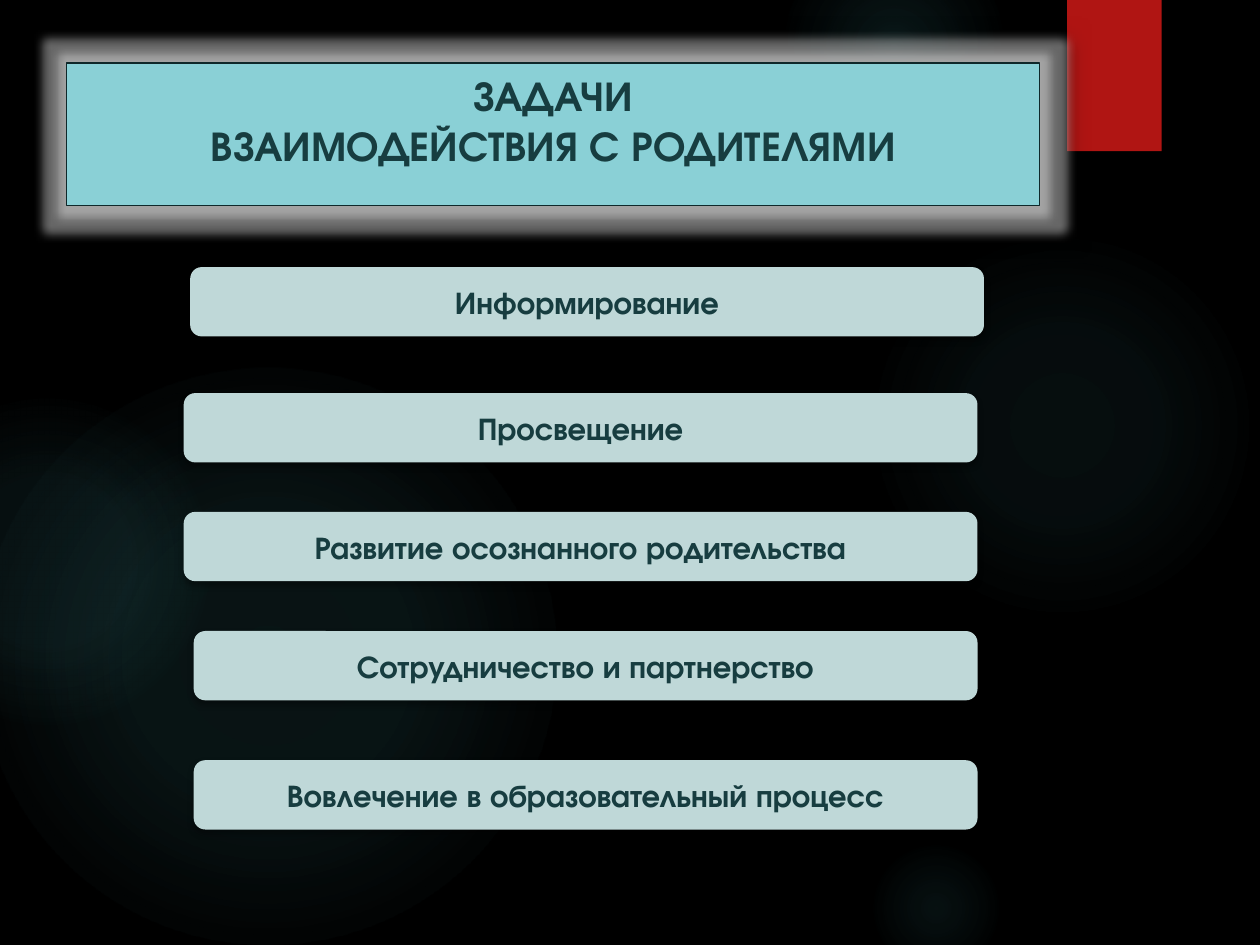
from dataclasses import dataclass
from typing import Any

from lxml import etree
from pptx import Presentation
from pptx.dml.color import RGBColor
from pptx.enum.shapes import MSO_SHAPE as Shape
from pptx.enum.text import MSO_ANCHOR as Anchor, PP_ALIGN as Align
from pptx.oxml import parse_xml
from pptx.oxml.ns import qn
from pptx.util import Inches, Pt

DRAWING = "http://schemas.openxmlformats.org/drawingml/2006/main"


def color(value):
    """Turn a hex string into a colour."""
    return RGBColor.from_string(value)


def color_xml(value, percent):
    """Return the markup of a colour with the given opacity."""
    return f'<a:srgbClr val="{value}"><a:alpha val="{percent * 1000}"/></a:srgbClr>'


def write(shape, text, size=18, fill="173D40", font="TeX Gyre Adventor", bold=True,
          align=Align.CENTER, anchor=Anchor.MIDDLE):
    """Put formatted text into a shape."""
    frame = shape.text_frame
    frame.word_wrap = True
    frame.vertical_anchor = anchor
    paragraph = frame.paragraphs[0]
    paragraph.text = text
    paragraph.alignment = align
    for run in paragraph.runs:
        run.font.size = Pt(size)
        run.font.name = font
        run.font.bold = bold
        run.font.color.rgb = color(fill)


@dataclass
class Canvas:
    """Draws on a slide ruled into columns and rows of a twelfth of an inch."""

    slide: Any
    unit: float = 1 / 12
    accent: str = "50B9C1"
    bar_fill: str = "BFD8D8"

    def block(self, kind, left, top, width, height, fill=None, line=None):
        """Add a preset shape with plain fill and line."""
        box = [Inches(value * self.unit) for value in (left, top, width, height)]
        shape = self.slide.shapes.add_shape(kind, *box)
        shape.shadow.inherit = False
        shape.fill.background()
        shape.line.fill.background()
        if fill:
            shape.fill.solid()
            shape.fill.fore_color.rgb = color(fill)
        if line:
            shape.line.color.rgb = color(line)
            shape.line.width = Pt(0.75)
        return shape

    def light(self, left, top, size, stops):
        """Add a circle of light that fades outwards."""
        shape = self.block(Shape.OVAL, left, top, size, size)
        marks = "".join(f'<a:gs pos="{place * 1000}">{color_xml(self.accent, opacity)}</a:gs>'
                        for place, opacity in stops)
        gradient = parse_xml(
            f'<a:gradFill xmlns:a="{DRAWING}" rotWithShape="1"><a:gsLst>{marks}</a:gsLst>'
            '<a:path path="circle"><a:fillToRect l="50000" t="50000" r="50000" b="50000"/>'
            '</a:path></a:gradFill>')
        properties = shape.element.spPr
        properties.replace(properties.find(qn("a:noFill")), gradient)

    def shadow(self, shape, opacity, blur, distance):
        """Drop a black shadow straight down."""
        effects = shape.element.spPr.find(qn("a:effectLst"))
        effects.append(parse_xml(
            f'<a:outerShdw xmlns:a="{DRAWING}" blurRad="{Pt(blur)}" dist="{Pt(distance)}" '
            f'dir="5400000" rotWithShape="0">{color_xml("000000", opacity)}</a:outerShdw>'))

    def glow(self, shape, value, opacity, radius):
        """Surround a shape with a soft glow."""
        effects = shape.element.spPr.find(qn("a:effectLst"))
        mark = etree.SubElement(effects, qn("a:glow"), rad=str(Pt(radius)))
        mark.append(parse_xml(color_xml(value, opacity).replace(
            "<a:srgbClr", f'<a:srgbClr xmlns:a="{DRAWING}"', 1)))

    def title(self, text):
        """Add the glowing title panel."""
        shape = self.block(Shape.RECTANGLE, 6.36, 6, 92.64, 13.56, "8AD0D6", "0F282A")
        self.glow(shape, "FFFFFF", 40, 11)
        self.shadow(shape, 100, 8.5, 1)
        write(shape, text, size=24, anchor=Anchor.TOP)

    def ribbon(self):
        """Add the red ribbon at the top edge."""
        shape = self.block(Shape.RECTANGLE, 101.64, 0, 9, 14.4, "B01513")
        self.shadow(shape, 45, 3, 2)

    def task(self, text, left, top, right):
        """Add a rounded bar that names one task."""
        shape = self.block(Shape.ROUNDED_RECTANGLE, left, top, right - left, 6.6, self.bar_fill)
        self.shadow(shape, 32, 3.5, 2.2)
        write(shape, text)


LIGHTS = [
    (82.67, 22, 37, [(0, 7), (36, 6), (69, 0)]),
    (74.67, -6, 21, [(0, 14), (36, 7), (73, 0)]),
    (82.67, 80, 13, [(0, 9), (36, 5), (66, 0)]),
    (-2, 35, 55, [(0, 11), (36, 10), (75, 0)]),
    (-11, 38, 31, [(0, 8), (36, 8), (72, 0)]),
]
TASKS = [
    ("Информирование", 18.12, 25.44, 93.72),
    ("Просвещение", 17.5, 37.44, 93.1),
    ("Развитие осознанного родительства", 17.5, 48.75, 93.1),
    ("Сотрудничество и партнерство", 18.45, 60.1, 93.1),
    ("Вовлечение в образовательный процесс", 18.45, 72.4, 93.1),
]


def main():
    """Build the slide and save it."""
    presentation = Presentation()
    presentation.slide_width, presentation.slide_height = Inches(10), Inches(7.5)
    slide = presentation.slides.add_slide(presentation.slide_layouts[6])
    slide.background.fill.solid()
    slide.background.fill.fore_color.rgb = color("000000")
    canvas = Canvas(slide)
    for light in LIGHTS:
        canvas.light(*light)
    canvas.ribbon()
    canvas.title("ЗАДАЧИ\nВЗАИМОДЕЙСТВИЯ С РОДИТЕЛЯМИ")
    for task in TASKS:
        canvas.task(*task)
    presentation.save("out.pptx")


if __name__ == "__main__":
    main()
